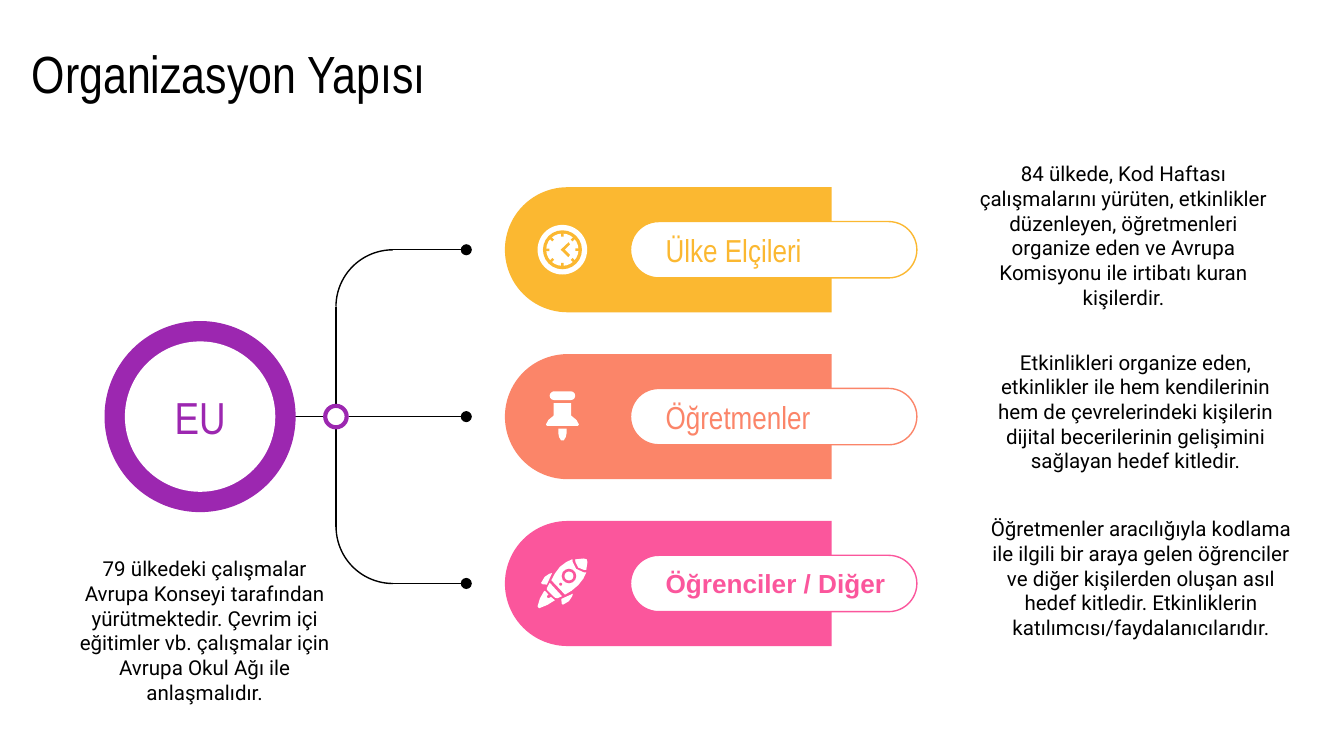
"""Organisation chart slide: an EU hub branching to three labelled roles."""
from math import cos, radians, sin

from lxml.etree import SubElement
from pptx import Presentation
from pptx.dml.color import RGBColor
from pptx.enum.shapes import MSO_CONNECTOR, MSO_SHAPE
from pptx.enum.text import MSO_ANCHOR, PP_ALIGN
from pptx.oxml.ns import qn
from pptx.util import Pt

COLORS = {"black": "000000", "white": "FFFFFF", "purple": "9C27B0",
          "yellow": "FBB831", "coral": "FB8569", "pink": "FB569C"}
HUB_X, HUB_Y, ROW_STEP = 180, 223.2, 89.4
TOP, BOTTOM = HUB_Y - ROW_STEP, HUB_Y + ROW_STEP
LINE_END, ICON_X, ARC = 249.8, 301.3, 61

prs = Presentation()
prs.slide_width, prs.slide_height = Pt(720), Pt(405)
s = prs.slides.add_slide(prs.slide_layouts[6])


def add_centered(kind, cx, cy, w, h, fill=None, line=None, weight=0.75):
    sp = s.shapes.add_shape(kind, Pt(cx - w / 2), Pt(cy - h / 2), Pt(w), Pt(h))
    sp.shadow.inherit = False
    if fill:
        sp.fill.solid()
        sp.fill.fore_color.rgb = RGBColor.from_string(COLORS[fill])
    else:
        sp.fill.background()
    if line:
        sp.line.color.rgb = RGBColor.from_string(COLORS[line])
        sp.line.width = Pt(weight)
    else:
        sp.line.fill.background()
    return sp


def write(sp, text, size, font, color, align=PP_ALIGN.CENTER, left=7.2, bold=False):
    tf = sp.text_frame
    tf.word_wrap = True
    tf.vertical_anchor = MSO_ANCHOR.MIDDLE
    tf.margin_left = Pt(left)
    tf.margin_right = tf.margin_top = tf.margin_bottom = Pt(7.2)
    p = tf.paragraphs[0]
    p.alignment = align
    r = p.add_run()
    r.text = text
    r.font.size, r.font.name, r.font.bold = Pt(size), font, bold
    r.font.color.rgb = RGBColor.from_string(COLORS[color])


title = s.shapes.add_textbox(Pt(10), Pt(19.7), Pt(608), Pt(38))
write(title, "Organizasyon Yapısı", 28, "Arial Narrow", "black", PP_ALIGN.LEFT)

roles = [
    ("Ülke Elçileri", "yellow", 17, "Arial Narrow", False),
    ("Öğretmenler", "coral", 17, "Arial Narrow", False),
    ("Öğrenciler / Diğer", "pink", 14, "Arial", True),
]
for i, (label, color, size, font, bold) in enumerate(roles):
    cy = TOP + i * ROW_STEP
    bar = add_centered(MSO_SHAPE.ROUND_2_SAME_RECTANGLE, 358, cy, 67, 175, color)
    bar.adjustments[0] = 0.5
    bar.rotation = 270
    pill = add_centered(MSO_SHAPE.ROUNDED_RECTANGLE, 414.5, cy, 153.4, 30.2, "white", color)
    pill.adjustments[0] = 0.5
    write(pill, label, size, font, color, PP_ALIGN.LEFT, 14.4, bold)

for diameter, color in [(26.6, "white"), (20.9, "yellow"), (17.3, "white")]:
    add_centered(MSO_SHAPE.OVAL, ICON_X, TOP, diameter, diameter, color)
for angle in range(0, 360, 45):
    x, y = ICON_X + 8 * cos(radians(angle)), TOP + 8 * sin(radians(angle))
    tick = add_centered(MSO_SHAPE.RECTANGLE, x, y, 2, 1.4, "yellow")
    tick.rotation = angle

pin_cap = add_centered(MSO_SHAPE.ROUNDED_RECTANGLE, ICON_X, HUB_Y - 11.2, 13.7, 4.7, "white")
pin_cap.adjustments[0] = 0.5

clock_hand = [(3.4, -4), (4.1, -2.8), (1.3, 0), (4.1, 2.8), (3.2, 4), (-0.9, 0)]
pin_body = [(-4.7, -7.2), (-4.7, -0.5), (-7.5, 1.8), (-8.8, 4.2), (-8.3, 5),
            (8.3, 5), (8.8, 4.2), (7.5, 1.8), (4.7, -0.5), (4.7, -7.2)]
pin_tip = [(-2.2, 6.5), (-2.2, 9), (-1.8, 11), (-0.7, 12.8),
           (0.7, 12.8), (1.8, 11), (2.2, 9), (2.2, 6.5)]
rocket_base = [(-6.8, -0.4), (-8.4, 2.5), (-8.3, 3.4), (-4, 7.6), (-2.7, 7.9), (-0.2, 6.8)]
rocket_nose = [(6.8, -12.9), (11.2, -13.4), (13, -13), (13.4, -11.5),
               (12.8, -7.3), (11.5, -7.3), (8.5, -8.5), (7, -11.5)]
rocket_body = [(5.4, -13), (2.2, -11.5), (-1.2, -9), (-4, -5.3), (-5.9, -1.7),
               (1.4, 6), (5, 3.9), (8.5, 0.9), (11.2, -2.5), (12.8, -5.9),
               (11.5, -5.9), (7.4, -7.8), (5.5, -11.5)]
rocket_fin = [(5.6, 5.5), (2.3, 7), (-0.6, 8.3), (-0.4, 10.8), (0.3, 11.4), (3.5, 9.5), (5.2, 7)]
mirrored_fin = [(-y, -x) for x, y in rocket_fin]
rocket_flame = [(-9.7, 4), (-12, 8), (-13.3, 12.3), (-12.5, 13.3), (-8, 11.5), (-4, 9),
                (-6.1, 7.2), (-7.2, 7.9), (-8.3, 7.5), (-8.2, 6.6), (-7.5, 5.9), (-9, 4.2)]
outlines = [(TOP, "yellow", [clock_hand]), (HUB_Y, "white", [pin_body, pin_tip]),
            (BOTTOM, "white", [rocket_base, rocket_nose, rocket_body,
                               rocket_fin, mirrored_fin, rocket_flame])]
for cy, color, parts in outlines:
    for part in parts:
        points = [((ICON_X + x) * 100, (cy + y) * 100) for x, y in part]
        builder = s.shapes.build_freeform(*points[0], scale=Pt(0.01))
        builder.add_line_segments(points[1:], close=True)
        sp = builder.convert_to_shape()
        sp.shadow.inherit = False
        sp.fill.solid()
        sp.fill.fore_color.rgb = RGBColor.from_string(COLORS[color])
        sp.line.fill.background()

for dx, dy, diameter, color in [(3.5, -4, 7.8, "pink"), (3.5, -4, 4.8, "white"),
                                (-0.9, 0.4, 1.6, "pink")]:
    add_centered(MSO_SHAPE.OVAL, ICON_X + dx, BOTTOM + dy, diameter, diameter, color)

for cy, rotation in [(TOP + ARC / 2, 270), (BOTTOM - ARC / 2, 180)]:
    arc = add_centered(MSO_SHAPE.ARC, HUB_X + ARC / 2, cy, ARC, ARC, None, "black")
    arc.rotation = rotation

branches = [
    (HUB_X + ARC / 2, TOP, LINE_END, TOP, True),
    (HUB_X, TOP + ARC / 2, HUB_X, HUB_Y, False),
    (HUB_X + ARC / 2, BOTTOM, LINE_END, BOTTOM, True),
    (HUB_X, BOTTOM - ARC / 2, HUB_X, HUB_Y, False),
    (126, HUB_Y, LINE_END, HUB_Y, True),
]
for x1, y1, x2, y2, dotted in branches:
    line = s.shapes.add_connector(MSO_CONNECTOR.STRAIGHT, Pt(x1), Pt(y1), Pt(x2), Pt(y2))
    line.line.color.rgb = RGBColor.from_string(COLORS["black"])
    line.line.width = Pt(0.75)
    if dotted:
        SubElement(line.line._get_or_add_ln(), qn("a:tailEnd"), type="oval")
    SubElement(line._element.spPr, qn("a:effectLst"))

add_centered(MSO_SHAPE.OVAL, HUB_X, HUB_Y, 11.5, 11.5, "white", "purple", 2.25)
add_centered(MSO_SHAPE.OVAL, 107.2, HUB_Y, 102.4, 102.4, "purple")
hub = add_centered(MSO_SHAPE.OVAL, 107.2, HUB_Y, 80.6, 80.6, "white")
write(hub, "EU", 24, "Arial Narrow", "purple")

descriptions = [
    (30.2, 316.8, 159, "79 ülkedeki çalışmalar Avrupa Konseyi tarafından yürütmektedir. "
     "Çevrim içi eğitimler vb. çalışmalar için Avrupa Okul Ağı ile anlaşmalıdır."),
    (512.6, 105.1, 178.6, "84 ülkede, Kod Haftası çalışmalarını yürüten, etkinlikler düzenleyen, "
     "öğretmenleri organize eden ve Avrupa Komisyonu ile irtibatı kuran kişilerdir."),
    (519.1, 199.4, 178.6, "Etkinlikleri organize eden, etkinlikler ile hem kendilerinin hem de "
     "çevrelerindeki kişilerin dijital becerilerinin gelişimini sağlayan hedef kitledir."),
    (522, 288.7, 178.6, "Öğretmenler aracılığıyla kodlama ile ilgili bir araya gelen öğrenciler ve "
     "diğer kişilerden oluşan asıl hedef kitledir. Etkinliklerin katılımcısı/faydalanıcılarıdır."),
]
for x, y, w, text in descriptions:
    write(s.shapes.add_textbox(Pt(x), Pt(y), Pt(w), Pt(41.8)), text, 11, "Roboto", "black")

prs.save("out.pptx")
